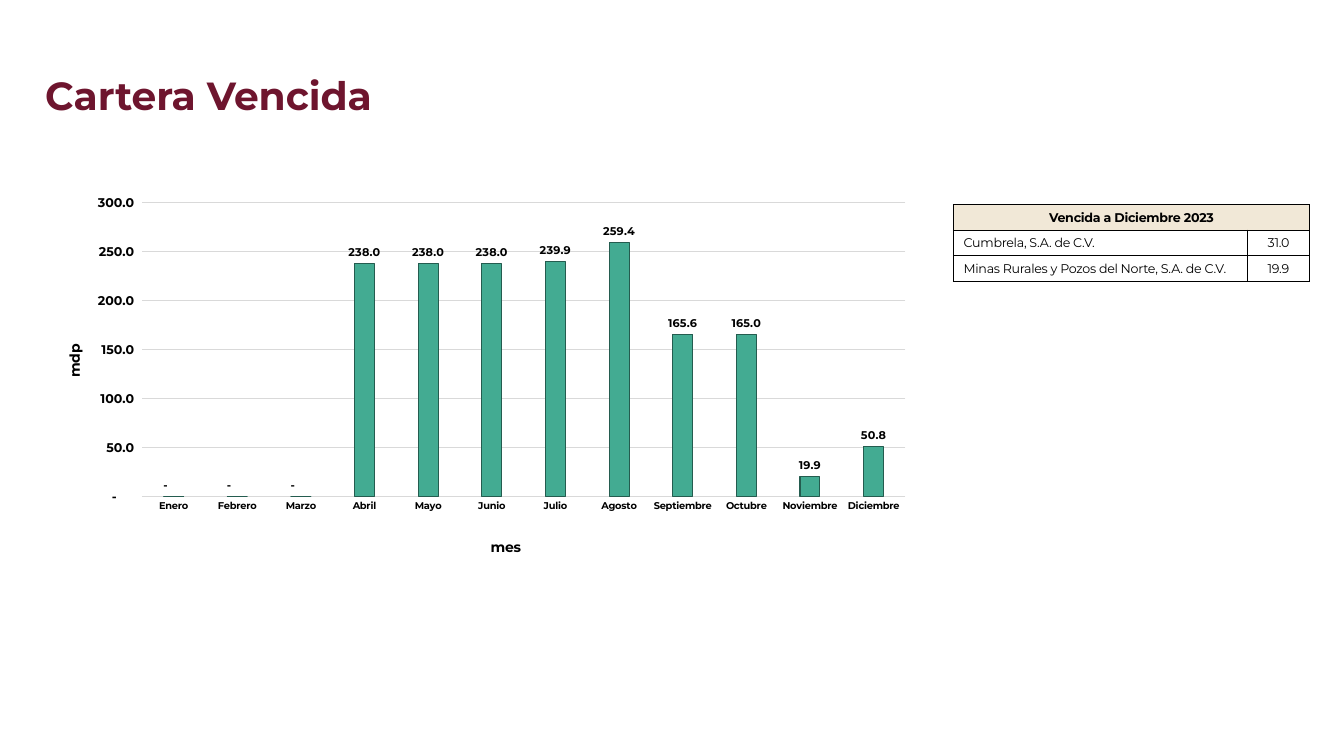
from dataclasses import dataclass

from lxml.etree import SubElement
from pptx import Presentation
from pptx.chart.data import CategoryChartData
from pptx.dml.color import RGBColor
from pptx.enum.chart import XL_CHART_TYPE, XL_LABEL_POSITION, XL_TICK_MARK
from pptx.enum.text import MSO_ANCHOR, PP_ALIGN
from pptx.oxml import parse_xml
from pptx.oxml.ns import nsdecls, qn
from pptx.util import Pt


@dataclass(frozen=True)
class Theme:
    """Colours, fonts and type sizes of the slide."""
    font: str = "Montserrat"
    chart_font: str = "Calibri"
    title: str = "6E152E"
    text: str = "000000"
    bar: str = "43AB92"
    bar_line: str = "245C4F"
    grid: str = "D9D9D9"
    header: str = "F1E8D7"
    cell: str = "FFFFFF"
    title_size: float = 28
    axis_title_size: float = 10
    table_size: float = 9
    value_size: float = 9
    label_size: float = 8
    category_size: float = 7


NUMBER_FORMAT = '_-* #,##0.0_-;\\-* #,##0.0_-;_-* "-"??_-;_-@_-'
OVERDUE = {
    "Enero": 0, "Febrero": 0, "Marzo": 0, "Abril": 238, "Mayo": 238, "Junio": 238,
    "Julio": 239.9, "Agosto": 259.4, "Septiembre": 165.6, "Octubre": 165,
    "Noviembre": 19.9, "Diciembre": 50.8,
}
DEBTORS = [
    ("Cumbrela, S.A. de C.V.", "31.0"),
    ("Minas Rurales y Pozos del Norte, S.A. de C.V.", "19.9"),
]


def set_font(font, size, color, name, bold=False):
    """Apply size, colour, typeface and weight to a font."""
    font.size, font.name, font.bold = Pt(size), name, bold
    font.color.rgb = RGBColor.from_string(color)


def write(p, text, size, color, name, bold=False, align=None, spacing=None, track=None):
    """Add a formatted run to a paragraph."""
    if align is not None:
        p.alignment = align
    if spacing:
        p.line_spacing = spacing
    r = p.add_run()
    r.text = text
    set_font(r.font, size, color, name, bold)
    if track:
        r.font._element.set("spc", str(round(track * 100)))


def manual_layout(**values):
    """Return a chart layout element with fractions of the chart area."""
    layout = parse_xml(f"<c:layout {nsdecls('c')}><c:manualLayout/></c:layout>")
    for tag, value in values.items():
        SubElement(layout[0], qn(f"c:{tag}")).set("val", str(value))
    return layout


def drop_layout(element):
    """Remove the automatic layout of a chart element."""
    for layout in element.findall(qn("c:layout")):
        element.remove(layout)


class Deck:
    """Builds elements on the current slide in one theme."""

    def __init__(self, width, height, theme):
        """Start a presentation with one blank slide."""
        self.theme = theme
        self.prs = Presentation()
        self.prs.slide_width, self.prs.slide_height = Pt(width), Pt(height)
        self.s = self.prs.slides.add_slide(self.prs.slide_layouts[6])

    def title(self, text, x, y, w, h):
        """Add the slide title."""
        t = self.theme
        tf = self.s.shapes.add_textbox(Pt(x), Pt(y), Pt(w), Pt(h)).text_frame
        tf.word_wrap = True
        tf.vertical_anchor = MSO_ANCHOR.BOTTOM
        write(tf.paragraphs[0], text, t.title_size, t.title, t.font, True, spacing=0.9)

    def axis(self, axis, text, size, x, y, rotation=0):
        """Style an axis and place its title."""
        t = self.theme
        set_font(axis.tick_labels.font, size, t.text, t.font, True)
        axis.major_tick_mark = axis.minor_tick_mark = XL_TICK_MARK.NONE
        tf = axis.axis_title.text_frame
        tf._txBody.bodyPr.set("rot", str(rotation * 60000))
        tf._txBody.bodyPr.set("vert", "horz")
        write(tf.paragraphs[0], text, t.axis_title_size, t.text, t.font, True)
        title = axis.axis_title._element
        drop_layout(title)
        title.find(qn("c:tx")).addnext(manual_layout(xMode="edge", yMode="edge", x=x, y=y))

    def column_chart(self, data, x, y, w, h):
        """Add the monthly column chart."""
        t = self.theme
        cd = CategoryChartData()
        cd.categories = list(data)
        cd.add_series("Series 1", list(data.values()))
        chart = self.s.shapes.add_chart(
            XL_CHART_TYPE.COLUMN_CLUSTERED, Pt(x), Pt(y), Pt(w), Pt(h), cd).chart
        set_font(chart.font, t.axis_title_size, t.text, t.chart_font)
        chart.has_legend = chart.has_title = False
        plot = chart.plots[0]
        plot.gap_width, plot.overlap, plot.vary_by_categories = 219, -27, False
        area = plot._element.getparent()
        drop_layout(area)
        area.insert(0, manual_layout(layoutTarget="inner", xMode="edge", yMode="edge",
                                     x=0.12, y=0.04, w=0.86, h=0.76))

        bars = plot.series[0].format
        bars.fill.solid()
        bars.fill.fore_color.rgb = RGBColor.from_string(t.bar)
        bars.line.color.rgb = RGBColor.from_string(t.bar_line)
        bars.line.width = Pt(0.75)
        labels = plot.series[0].data_labels
        labels.show_value = True
        labels.position = XL_LABEL_POSITION.OUTSIDE_END
        labels.number_format, labels.number_format_is_linked = NUMBER_FORMAT, False
        set_font(labels.font, t.label_size, t.text, t.font, True)

        months, values = chart.category_axis, chart.value_axis
        self.axis(months, "mes", t.category_size, 0.51, 0.9)
        self.axis(values, "mdp", t.value_size, 0.03, 0.4, -90)
        values.minimum_scale, values.maximum_scale, values.major_unit = 0, 300, 50
        values.tick_labels.number_format = NUMBER_FORMAT
        values.tick_labels.number_format_is_linked = False
        values.format.line.fill.background()
        for line in (months.format.line, values.major_gridlines.format.line):
            line.color.rgb = RGBColor.from_string(t.grid)
            line.width = Pt(0.75)

    def cell(self, cell, text, fill, bold=False, align=None):
        """Fill, border and write one table cell."""
        t = self.theme
        cell.vertical_anchor = MSO_ANCHOR.MIDDLE
        cell.margin_top = cell.margin_bottom = Pt(0)
        tcPr = cell._tc.get_or_add_tcPr()
        for side in "LRTB":
            tcPr.append(parse_xml(
                f'<a:ln{side} {nsdecls("a")} w="{Pt(1)}"><a:solidFill>'
                f'<a:srgbClr val="{t.text}"/></a:solidFill></a:ln{side}>'))
        cell.fill.solid()
        cell.fill.fore_color.rgb = RGBColor.from_string(fill)
        if text:
            write(cell.text_frame.paragraphs[0], text, t.table_size, t.text, t.font,
                  bold, align, track=-0.2)

    def table(self, header, rows, x, y, widths, row_height):
        """Add a table with one header merged across its columns."""
        t = self.theme
        count = len(rows) + 1
        tbl = self.s.shapes.add_table(count, len(widths), Pt(x), Pt(y), Pt(sum(widths)),
                                      Pt(row_height * count)).table
        tbl.first_row = tbl.horz_banding = False
        for column, width in zip(tbl.columns, widths):
            column.width = Pt(width)
        tbl.cell(0, 0).merge(tbl.cell(0, len(widths) - 1))
        for j, text in enumerate([header, ""]):
            self.cell(tbl.cell(0, j), text, t.header, True, PP_ALIGN.CENTER)
        for i, row in enumerate(rows, 1):
            for j, text in enumerate(row):
                align = PP_ALIGN.CENTER if j else PP_ALIGN.LEFT
                self.cell(tbl.cell(i, j), text, t.cell, align=align)


def main():
    """Build and save the slide."""
    deck = Deck(960, 540, Theme())
    deck.title("Cartera Vencida", 25.2, 38.2, 771.8, 50.4)
    deck.column_chart(OVERDUE, 25.2, 133.9, 634.3, 275.8)
    deck.table("Vencida a Diciembre 2023", DEBTORS, 681.1, 146.2, [210.2, 43.9], 18.3)
    deck.prs.save("out.pptx")


if __name__ == "__main__":
    main()
